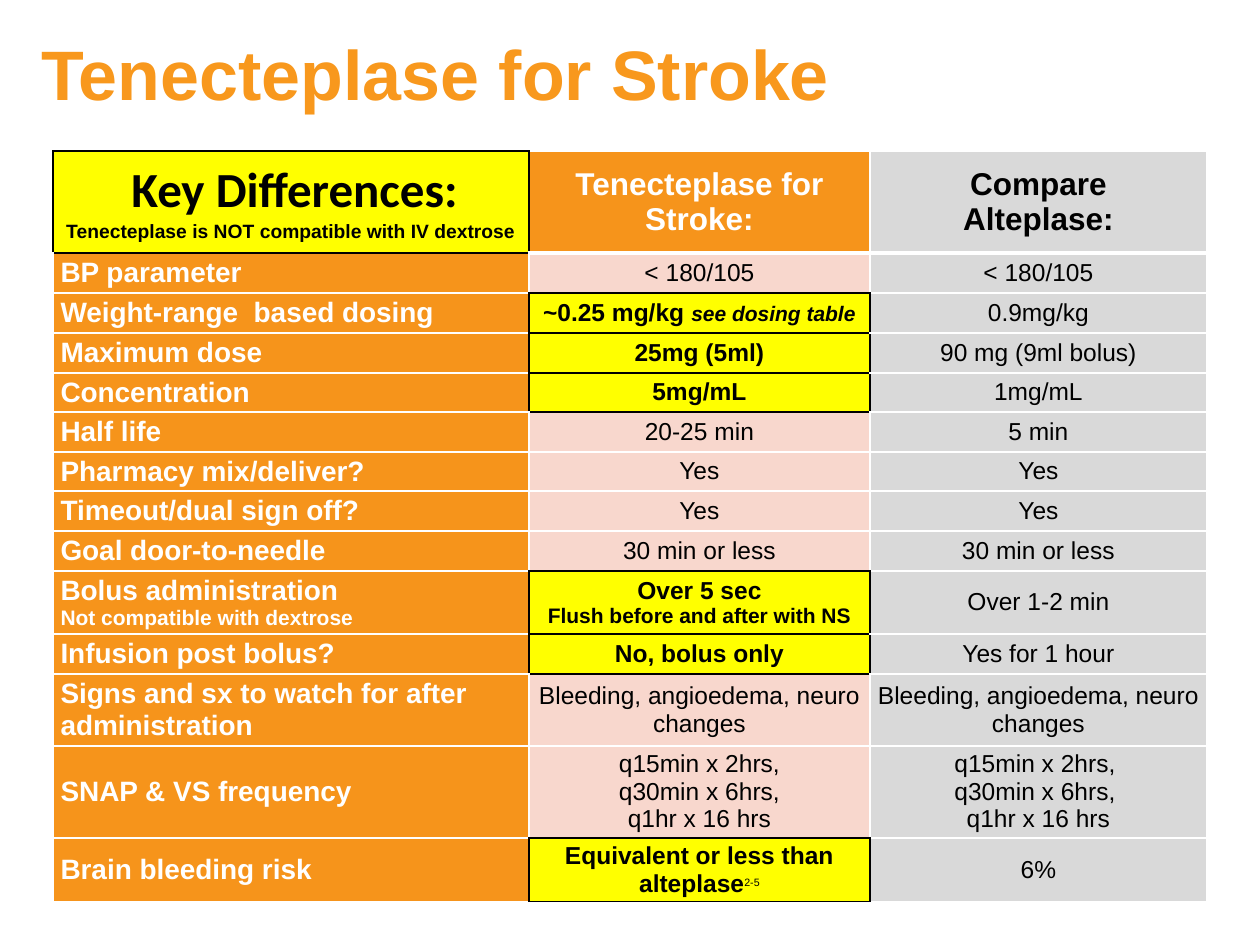
"""Build the stroke drug comparison slide."""
import pptx
import pptx.dml.color
import pptx.enum.text
import pptx.oxml.ns
import pptx.util
from lxml import etree

PX = 914400 / 126
THEME = {
    "font": "Arial", "title": "F8981D", "orange": "F6941B", "pink": "F8D7CD",
    "grey": "D9D9D9", "yellow": "FFFF00", "white": "FFFFFF", "black": "000000",
    "navy": "262673", "thin": 0.9, "thick": 2.71,
}
STYLES = {
    "title": dict(size=40, color="title"),
    "pad": dict(size=18, color="navy", font="Calibri"),
    "key": dict(size=28, font="Calibri"),
    "warn": dict(size=11),
    "head": dict(size=18, color="white"),
    "plain": dict(size=18),
    "label": dict(size=16, color="white"),
    "sub": dict(size=12, color="white"),
    "body": dict(size=14, bold=False),
    "hot": dict(size=14),
    "note": dict(size=12),
    "slant": dict(size=12, italic=True),
    "cite": dict(size=10.5, bold=False, base=30),
}
TITLE = "Tenecteplase for Stroke"
HEAD = (
    [[(" ", "pad"), ("Key Differences:", "key")],
     [("Tenecteplase is NOT compatible with IV dextrose", "warn")]],
    [[("Tenecteplase for Stroke:", "head")]],
    [[("Compare", "plain")], [("Alteplase:", "plain")]],
)
ROWS = [
    ("BP parameter", "< 180/105", "< 180/105"),
    ("Weight-range  based dosing",
     [[("~0.25 mg/kg ", "hot"), ("see dosing table", "slant")]], "0.9mg/kg"),
    ("Maximum dose", [[("25mg (5ml)", "hot")]], "90 mg (9ml bolus)"),
    ("Concentration", [[("5mg/mL", "hot")]], "1mg/mL"),
    ("Half life", "20-25 min", "5 min"),
    ("Pharmacy mix/deliver?", "Yes", "Yes"),
    ("Timeout/dual sign off?", "Yes", "Yes"),
    ("Goal door-to-needle", "30 min or less", "30 min or less"),
    ([[("Bolus administration", "label")],
      [("Not compatible with dextrose", "sub")]],
     [[("Over 5 sec", "hot")], [("Flush before and after with NS", "note")]],
     "Over 1-2 min"),
    ("Infusion post bolus?", [[("No, bolus only", "hot")]], "Yes for 1 hour"),
    ("Signs and sx to watch for after administration",
     "Bleeding, angioedema, neuro changes",
     "Bleeding, angioedema, neuro changes"),
    ("SNAP & VS frequency",
     "q15min x 2hrs,\nq30min x 6hrs,\nq1hr x 16 hrs",
     "q15min x 2hrs, \nq30min x 6hrs, \nq1hr x 16 hrs"),
    ("Brain bleeding risk",
     [[("Equivalent or less than alteplase", "hot"), ("2-5", "cite")]], "6%"),
]
GRID = [HEAD, *ROWS]
XS = [53, 529, 870, 1207]
YS = [151, 253, 293, 333, 373, 412, 452, 491, 531, 571, 634, 674, 746, 838, 902]
SPOTS = {(0, 0)} | {(r, 1) for r, row in enumerate(ROWS, 1)
                    if not isinstance(row[1], str)}
SIDES = {"lnL": (0, -1), "lnR": (0, 1), "lnT": (-1, 0), "lnB": (1, 0)}


def px(num):
    return pptx.util.Emu(round(num * PX))


def rgb(name):
    return pptx.dml.color.RGBColor.from_string(THEME[name])


def add_run(para, text, style):
    look = STYLES[style]
    run = para.add_run()
    run.text = text
    font = run.font
    font.name = look.get("font", THEME["font"])
    font.size = pptx.util.Pt(look["size"])
    font.bold = look.get("bold", True)
    font.italic = look.get("italic", False)
    font.color.rgb = rgb(look.get("color", "black"))
    if "base" in look:
        run._r.get_or_add_rPr().set("baseline", str(look["base"] * 1000))


def fill_text(frame, paras, align):
    for i, runs in enumerate(paras):
        para = frame.add_paragraph() if i else frame.paragraphs[0]
        para.alignment = align
        for text, style in runs:
            add_run(para, text, style)


def edge(row, col, side):
    down, over = SIDES[side]
    if (row, col) in SPOTS or (row + down, col + over) in SPOTS:
        return "black", THEME["thin"]
    split = (row, side) in {(0, "lnB"), (1, "lnT")}
    return "white", THEME["thick" if split else "thin"]


def add_edges(cell, row, col):
    props = cell._tc.get_or_add_tcPr()
    tag = pptx.oxml.ns.qn
    for i, side in enumerate(SIDES):
        color, width = edge(row, col, side)
        line = etree.Element(tag("a:" + side), w=str(pptx.util.Pt(width)))
        fill = etree.SubElement(line, tag("a:solidFill"))
        etree.SubElement(fill, tag("a:srgbClr"), val=THEME[color])
        props.insert(i, line)


def fill_cell(cell, row, col, value):
    if isinstance(value, str):
        style = "body" if col else "label"
        value = [[(line, style)] for line in value.split("\n")]
    center = col or not row
    kind = pptx.enum.text.PP_ALIGN
    fill_text(cell.text_frame, value, kind.CENTER if center else kind.LEFT)
    cell.vertical_anchor = pptx.enum.text.MSO_ANCHOR.MIDDLE
    cell.margin_left = cell.margin_right = pptx.util.Inches(0.06)
    cell.margin_top = cell.margin_bottom = pptx.util.Inches(0.03)
    base = ("orange", "pink" if row else "orange", "grey")[col]
    cell.fill.solid()
    cell.fill.fore_color.rgb = rgb("yellow" if (row, col) in SPOTS else base)
    add_edges(cell, row, col)


def add_grid(slide):
    table = slide.shapes.add_table(
        len(GRID), len(HEAD), px(XS[0]), px(YS[0]),
        px(XS[-1] - XS[0]), px(YS[-1] - YS[0])).table
    for col, (left, right) in zip(table.columns, zip(XS, XS[1:])):
        col.width = px(right - left)
    for row, (top, end) in zip(table.rows, zip(YS, YS[1:])):
        row.height = px(end - top)
    for r, row in enumerate(GRID):
        for c, value in enumerate(row):
            fill_cell(table.cell(r, c), r, c, value)


def add_title(slide):
    frame = slide.shapes.add_textbox(px(29), px(-6), px(881), px(158)).text_frame
    frame.word_wrap = True
    frame.vertical_anchor = pptx.enum.text.MSO_ANCHOR.MIDDLE
    fill_text(frame, [[(TITLE, "title")]], pptx.enum.text.PP_ALIGN.LEFT)


def main():
    deck = pptx.Presentation()
    deck.slide_width, deck.slide_height = px(1260), px(945)
    slide = deck.slides.add_slide(deck.slide_layouts[6])
    add_grid(slide)
    add_title(slide)
    deck.save("out.pptx")


if __name__ == "__main__":
    main()
